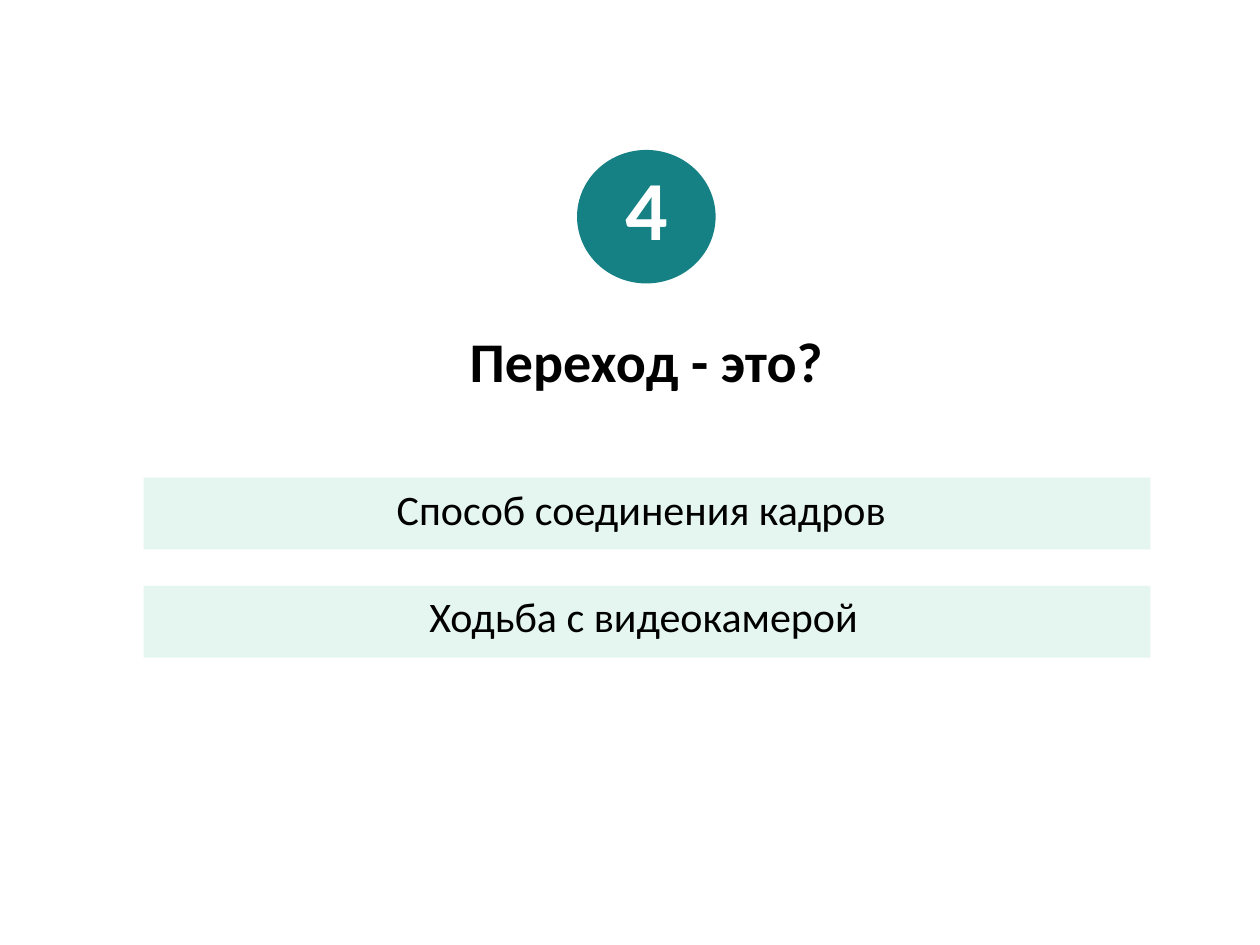
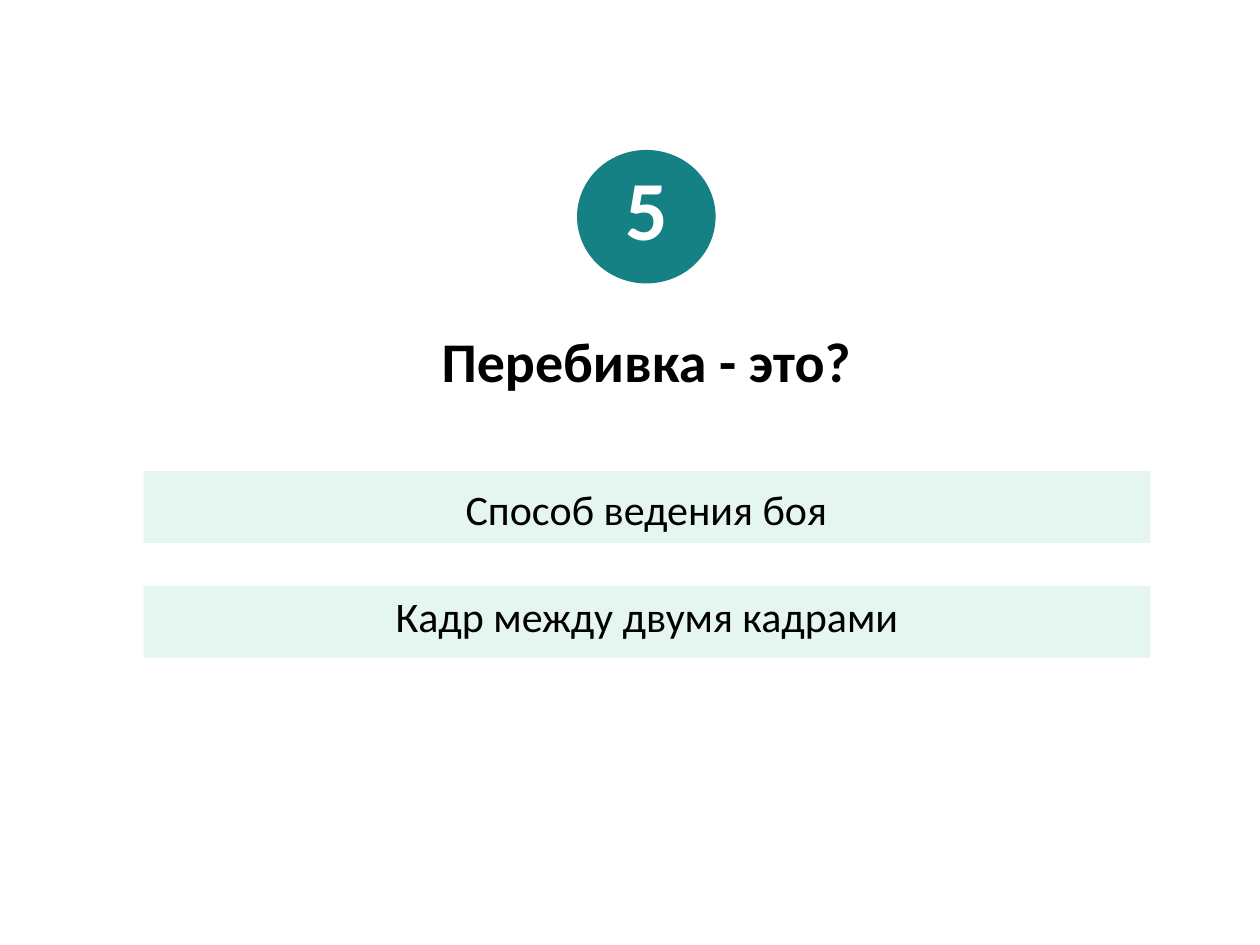
from pptx import Presentation
from pptx.dml.color import RGBColor
from pptx.enum.shapes import MSO_SHAPE
from pptx.enum.text import MSO_ANCHOR, MSO_AUTO_SIZE, PP_ALIGN
from pptx.util import Inches, Pt

LEFT, CENTER = PP_ALIGN.LEFT, PP_ALIGN.CENTER
TOP = MSO_ANCHOR.TOP
FIT_SHAPE = MSO_AUTO_SIZE.SHAPE_TO_FIT_TEXT
OVAL, RECTANGLE = MSO_SHAPE.OVAL, MSO_SHAPE.RECTANGLE

FONT = "Calibri"
TEAL, MINT, WHITE, BLACK = "158184", "E5F6F0", "FFFFFF", "000000"
TITLE_ONLY = 5

# Lengths are in inches
BADGE = (4.58, 1.19, 1.1, 1.06)
NUMBER_BOX = (4.52, 1.19, 1.22, 0.91)
TITLE_TOP, TITLE_HEIGHT = 2.54, 0.64
BAR_LEFT, BAR_WIDTH, BAR_HEIGHT = 1.14, 7.99, 0.57
ANSWER_TOPS, ANSWER_HEIGHT = (3.79, 4.64), 0.5
CENTER_X = BADGE[0] + BADGE[2] / 2

# Answers: text, left, width, alignment, wrapped
QUESTIONS = [
    {
        "number": "4",
        "title": "Переход - это?",
        "title_width": 3.02,
        "bar_tops": (3.79, 4.65),
        "answers": [
            ("Способ соединения кадров", 3.05, 4.16, LEFT, True),
            ("Ходьба с видеокамерой", 3.31, 3.64, LEFT, False),
        ],
    },
    {
        "number": "5",
        "title": "Перебивка - это?",
        "title_width": 3.48,
        "bar_tops": (3.74, 4.65),
        "answers": [
            ("Способ ведения боя", 3.05, 4.16, CENTER, True),
            ("Кадр между двумя кадрами", 3.02, 4.23, CENTER, False),
        ],
    },
]


def color(hex_value):
    return RGBColor.from_string(hex_value)


def add_block(slide, kind, box, fill):
    shape = slide.shapes.add_shape(kind, *map(Inches, box))
    shape.shadow.inherit = False
    shape.fill.solid()
    shape.fill.fore_color.rgb = color(fill)
    shape.line.fill.background()


def write(shape, text, size, font_color=BLACK, bold=False, alignment=CENTER, wrap=True):
    frame = shape.text_frame
    frame.word_wrap = wrap
    frame.auto_size = FIT_SHAPE
    frame.vertical_anchor = TOP
    paragraph = frame.paragraphs[0]
    paragraph.alignment = alignment
    run = paragraph.add_run()
    run.text = text
    run.font.name = FONT
    run.font.size = Pt(size)
    run.font.bold = bold
    run.font.color.rgb = color(font_color)


def add_text(slide, box, text, size, **style):
    write(slide.shapes.add_textbox(*map(Inches, box)), text, size, **style)


def set_title(slide, text, width):
    title = slide.shapes.title
    title.left, title.top = Inches(CENTER_X - width / 2), Inches(TITLE_TOP)
    title.width, title.height = Inches(width), Inches(TITLE_HEIGHT)
    write(title, text, 32, bold=True, wrap=False)


def add_question(presentation, question):
    slide = presentation.slides.add_slide(presentation.slide_layouts[TITLE_ONLY])
    add_block(slide, OVAL, BADGE, TEAL)
    add_text(slide, NUMBER_BOX, question["number"], 48, font_color=WHITE, bold=True)
    set_title(slide, question["title"], question["title_width"])
    for bar_top in question["bar_tops"]:
        add_block(slide, RECTANGLE, (BAR_LEFT, bar_top, BAR_WIDTH, BAR_HEIGHT), MINT)
    for top, (text, left, width, alignment, wrap) in zip(ANSWER_TOPS, question["answers"]):
        add_text(slide, (left, top, width, ANSWER_HEIGHT), text, 24,
                 alignment=alignment, wrap=wrap)


def main():
    presentation = Presentation()
    presentation.slide_width, presentation.slide_height = Inches(10), Inches(7.5)
    for question in QUESTIONS:
        add_question(presentation, question)
    presentation.save("out.pptx")


if __name__ == "__main__":
    main()
